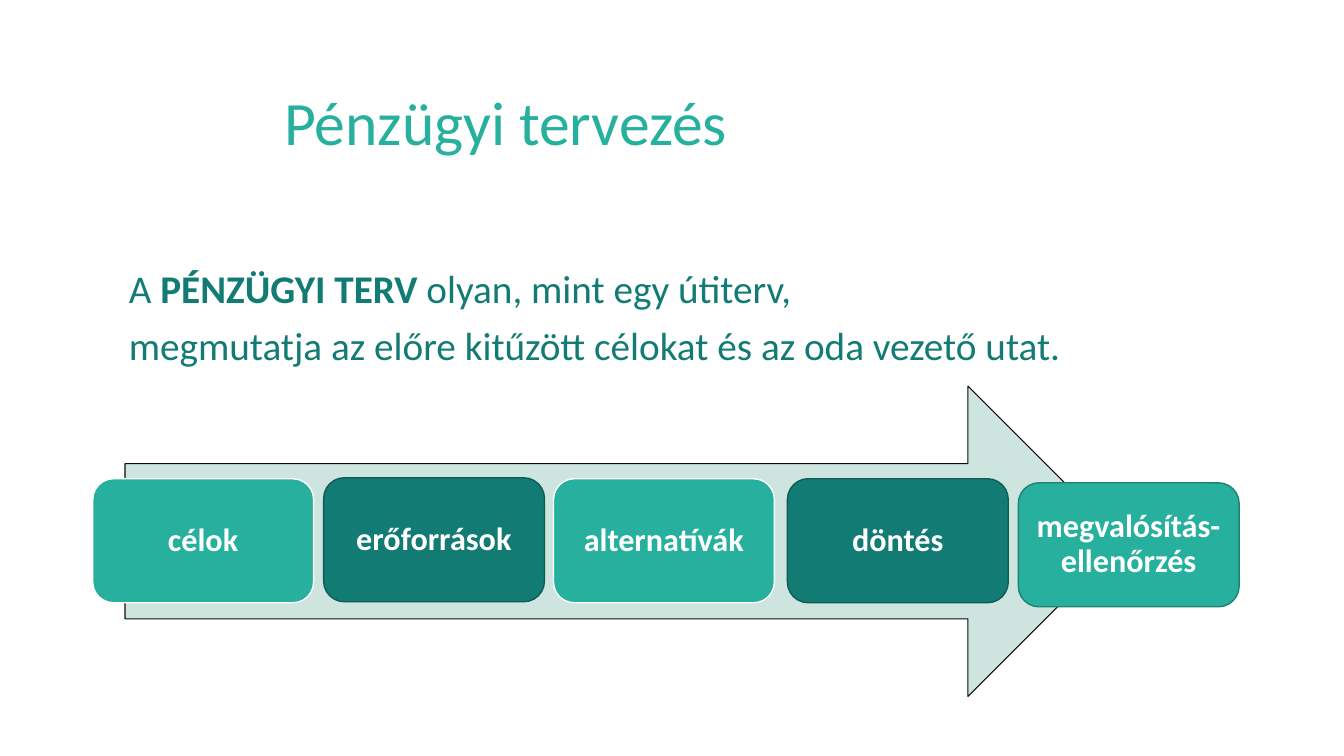
from pptx import Presentation, util as u
from pptx.dml.color import RGBColor
from pptx.enum import shapes, text

COLORS = {
    "teal": "26B09D",
    "dark": "127C74",
    "arrow": "CDE4DF",
    "arrow_line": "0D0C0C",
    "dark_line": "0D5C56",
    "teal_line": "1C8274",
    "white": "FFFFFF",
}
STEP_WIDTH, STEP_HEIGHT = 2.19, 1.23
STEPS = [
    ("célok", 0, 0.92, "teal", "white"),
    ("erőforrások", 2.29, 0.91, "dark", "dark_line"),
    ("alternatívák", 4.57, 0.92, "teal", "white"),
    ("döntés", 6.89, 0.92, "dark", "dark_line"),
    ("megvalósítás-ellenőrzés", 9.18, 0.96, "teal", "teal_line"),
]


def rgb(name):
    """Return the named palette colour."""
    return RGBColor.from_string(COLORS[name])


def write_text(shape, paragraphs, size, color, bold=False, align=text.PP_ALIGN.LEFT,
               anchor=text.MSO_ANCHOR.TOP, margin=None, gap=0):
    """Fill a shape with paragraphs, each a list of (wording, emphasised) runs."""
    frame = shape.text_frame
    frame.word_wrap = True
    frame.vertical_anchor = anchor
    if margin is not None:
        frame.margin_left = frame.margin_right = u.Inches(margin)
        frame.margin_top = frame.margin_bottom = u.Inches(margin)
    for index, runs in enumerate(paragraphs):
        paragraph = frame.add_paragraph() if index else frame.paragraphs[0]
        paragraph.alignment = align
        paragraph.line_spacing = 0.9
        if index:
            paragraph.space_before = u.Pt(gap)
        for wording, emphasised in runs:
            run = paragraph.add_run()
            run.text = wording
            run.font.name = "Calibri"
            run.font.size = u.Pt(size)
            run.font.bold = bold or emphasised
            run.font.color.rgb = rgb(color)


def add_block(slide, kind, left, top, width, height, fill, line, weight):
    """Add a filled and outlined preset shape."""
    shape = slide.shapes.add_shape(kind, *map(u.Inches, (left, top, width, height)))
    shape.shadow.inherit = False
    shape.fill.solid()
    shape.fill.fore_color.rgb = rgb(fill)
    shape.line.color.rgb = rgb(line)
    shape.line.width = u.Pt(weight)
    return shape


def add_title(slide, left, top, width, height):
    """Place the slide title."""
    box = slide.shapes.add_textbox(*map(u.Inches, (left, top, width, height)))
    write_text(box, [[("Pénzügyi tervezés", False)]], 44, "teal",
               anchor=text.MSO_ANCHOR.MIDDLE)


def add_definition(slide, left, top, width, height):
    """Place the two-line definition of a financial plan."""
    box = slide.shapes.add_textbox(*map(u.Inches, (left, top, width, height)))
    write_text(box, [
        [("A ", False), ("PÉNZÜGYI TERV ", True), ("olyan, mint egy útiterv,", False)],
        [("megmutatja az előre kitűzött célokat és az oda vezető utat.", False)],
    ], 28, "dark", gap=10)


def add_process(slide, left, top, width, height):
    """Draw the arrow and the planning steps laid over it."""
    add_block(slide, shapes.MSO_SHAPE.RIGHT_ARROW, left + 0.32, top, width - 1.47, height,
              "arrow", "arrow_line", 0.75)
    for label, across, down, fill, line in STEPS:
        step = add_block(slide, shapes.MSO_SHAPE.ROUNDED_RECTANGLE, left + across, top + down,
                         STEP_WIDTH, STEP_HEIGHT, fill, line, 1)
        write_text(step, [[(label, False)]], 23, "white", bold=True,
                   align=text.PP_ALIGN.CENTER, anchor=text.MSO_ANCHOR.MIDDLE, margin=0.1)


def main():
    """Build and save the slide."""
    presentation = Presentation()
    presentation.slide_width = u.Inches(13.33)
    presentation.slide_height = u.Inches(7.5)
    slide = presentation.slides.add_slide(presentation.slide_layouts[6])
    add_title(slide, 2.72, 0.56, 9.7, 1.37)
    add_definition(slide, 1.18, 2.63, 12.15, 4.27)
    add_process(slide, 0.92, 3.83, 11.37, 3.08)
    presentation.save("out.pptx")


if __name__ == "__main__":
    main()
